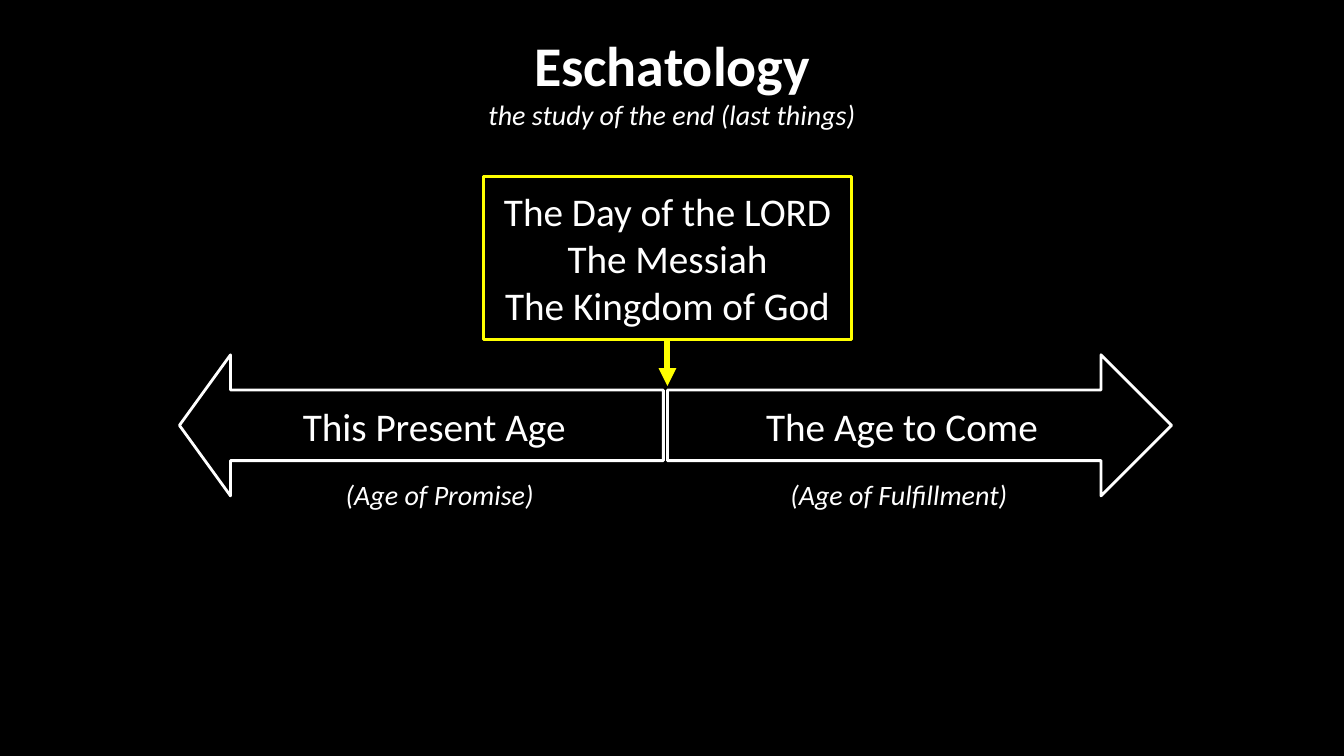
import pptx
import pptx.util
import pptx.dml.color
import pptx.enum.shapes
import pptx.enum.text
import pptx.oxml.ns
import lxml.etree

Inches, Pt = pptx.util.Inches, pptx.util.Pt
KIND = pptx.enum.shapes.MSO_SHAPE
ALIGN = pptx.enum.text.PP_ALIGN

FONT = "Calibri"
BLACK, WHITE, GOLD = "000000", "FFFFFF", "FFFF00"
HEAD = ["Eschatology", "the study of the end (last things)"]
EVENTS = ["The Day of the LORD", "The Messiah", "The Kingdom of God"]
MID, AGE_TOP, AGE_HIGH = 6.62, 3.52, 1.4
AGES = [
    ("This Present Age", KIND.LEFT_ARROW, 1.78, 4.8, 0.362),
    ("The Age to Come", KIND.RIGHT_ARROW, MID, 5, 0.5),
]
NOTES = [("(Age of Promise)", 3.33, 2.08), ("(Age of Fulfillment)", 7.74, 2.51)]
BOX_TOP, BOX_WIDE, BOX_HIGH = 1.75, 3.65, 1.62
TIP = 3.83


def color(code):
    return pptx.dml.color.RGBColor.from_string(code)


def add_tag(parent, name, **attrs):
    tag = lxml.etree.SubElement(parent, pptx.oxml.ns.qn(name))
    for key, value in attrs.items():
        tag.set(key, value)


def style(para, size, align, bold=False, italic=False):
    para.alignment = align
    for run in para.runs:
        font = run.font
        font.name, font.size = FONT, Pt(size)
        font.bold, font.italic = bold, italic
        font.color.rgb = color(WHITE)


def add_frame(parent, kind, place, lines, edge, inset):
    shape = parent.add_shape(kind, *map(Inches, place))
    shape.shadow.inherit = False
    shape.fill.background()
    shape.line.color.rgb = color(edge)
    shape.line.width = Pt(2)
    frame = shape.text_frame
    frame.text = "\n".join(lines)
    frame.word_wrap = True
    frame.vertical_anchor = pptx.enum.text.MSO_ANCHOR.MIDDLE
    frame.margin_left = frame.margin_right = Inches(inset)
    frame.margin_top = frame.margin_bottom = Inches(0.1)
    for para in frame.paragraphs:
        style(para, 28, ALIGN.CENTER)
    return shape


def add_head(slide):
    title = slide.shapes.title
    title.element.getparent().remove(title.element)
    body = slide.placeholders[1]
    body.left, body.top = Inches(0.22), Inches(0.25)
    body.width, body.height = Inches(12.89), Inches(6.83)
    frame = body.text_frame
    frame.text = "\n".join(HEAD)
    frame.auto_size = pptx.enum.text.MSO_AUTO_SIZE.NONE
    name, gloss = frame.paragraphs
    style(name, 40, ALIGN.CENTER, bold=True)
    style(gloss, 20, ALIGN.CENTER, italic=True)
    for para in (name, gloss):
        para.space_before = Pt(0)
        props = para._p.get_or_add_pPr()
        props.set("marL", "0")
        props.set("indent", "0")
        add_tag(props, "a:buNone")
    gloss.space_after = Pt(12)


def add_ages(slide):
    for text, kind, left, width, point in AGES:
        place = (left, AGE_TOP, width, AGE_HIGH)
        arrow = add_frame(slide.shapes, kind, place, [text], WHITE, 0.2)
        arrow.adjustments[0] = 0.5
        arrow.adjustments[1] = point


def add_events(slide):
    group = slide.shapes.add_group_shape().shapes
    place = (MID - BOX_WIDE / 2, BOX_TOP, BOX_WIDE, BOX_HIGH)
    add_frame(group, KIND.RECTANGLE, place, EVENTS, GOLD, 0.1)
    ends = (MID, BOX_TOP + BOX_HIGH, MID, TIP)
    straight = pptx.enum.shapes.MSO_CONNECTOR.STRAIGHT
    line = group.add_connector(straight, *map(Inches, ends))
    line.line.color.rgb = color(GOLD)
    line.line.width = Pt(4.25)
    add_tag(line.line._get_or_add_ln(), "a:tailEnd", type="triangle")
    add_tag(line._element.spPr, "a:effectLst")


def add_notes(slide):
    group = slide.shapes.add_group_shape().shapes
    for text, left, width in NOTES:
        box = group.add_textbox(*map(Inches, (left, 4.69, width, 0.44)))
        box.text_frame.text = text
        box.text_frame.word_wrap = True
        style(box.text_frame.paragraphs[0], 20, ALIGN.LEFT, italic=True)


def main():
    deck = pptx.Presentation()
    deck.slide_width, deck.slide_height = Inches(13.33), Inches(7.5)
    slide = deck.slides.add_slide(deck.slide_layouts[1])
    slide.background.fill.solid()
    slide.background.fill.fore_color.rgb = color(BLACK)
    add_head(slide)
    add_ages(slide)
    add_events(slide)
    add_notes(slide)
    deck.save("out.pptx")


if __name__ == "__main__":
    main()
